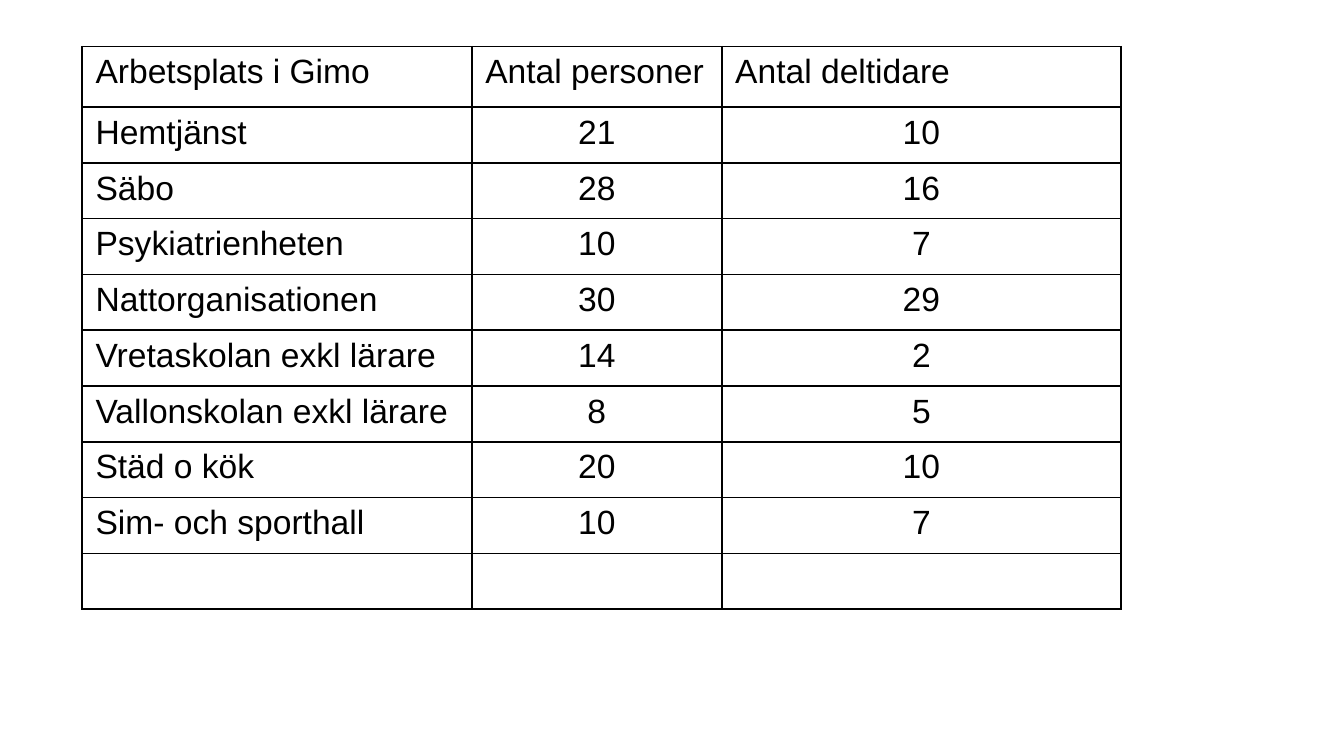
from typing import NamedTuple

from lxml.etree import SubElement
from pptx import Presentation
from pptx.dml.color import RGBColor
from pptx.enum.text import PP_ALIGN as Align
from pptx.oxml.ns import qn
from pptx.util import Pt

BLACK = RGBColor(0x00, 0x00, 0x00)
FONT = "Arial"
FONT_SIZE = Pt(18)
BORDER_WIDTH = Pt(1)

TABLE_LEFT, TABLE_TOP = 44, 25
COLUMN_WIDTHS = (208.8, 133.9, 213.8)
HEADER_HEIGHT, ROW_HEIGHT = 32.4, 29.9


class Workplace(NamedTuple):
    name: str
    people: str
    part_timers: str


HEADER = Workplace("Arbetsplats i Gimo", "Antal personer", "Antal deltidare")
WORKPLACES = (
    Workplace("Hemtjänst", "21", "10"),
    Workplace("Säbo", "28", "16"),
    Workplace("Psykiatrienheten", "10", "7"),
    Workplace("Nattorganisationen", "30", "29"),
    Workplace("Vretaskolan exkl lärare", "14", "2"),
    Workplace("Vallonskolan exkl lärare", "8", "5"),
    Workplace("Städ o kök", "20", "10"),
    Workplace("Sim- och sporthall", "10", "7"),
    Workplace("", "", ""),
)


def add_borders(cell) -> None:
    """Draw a solid line on all four sides of a table cell."""
    properties = cell._tc.get_or_add_tcPr()
    for side in ("a:lnL", "a:lnR", "a:lnT", "a:lnB"):
        line = SubElement(properties, qn(side), w=str(BORDER_WIDTH))
        fill = SubElement(line, qn("a:solidFill"))
        SubElement(fill, qn("a:srgbClr"), val=str(BLACK))


def fill_cell(cell, text: str, alignment: Align) -> None:
    add_borders(cell)
    cell.fill.background()
    paragraph = cell.text_frame.paragraphs[0]
    paragraph.text = text
    paragraph.alignment = alignment
    paragraph.font.size = FONT_SIZE
    for run in paragraph.runs:
        run.font.name = FONT
        run.font.size = FONT_SIZE
        run.font.bold = False
        run.font.color.rgb = BLACK


def add_workplace_table(slide) -> None:
    rows = (HEADER, *WORKPLACES)
    heights = (HEADER_HEIGHT, *[ROW_HEIGHT] * len(WORKPLACES))
    table = slide.shapes.add_table(
        len(rows), len(COLUMN_WIDTHS), Pt(TABLE_LEFT), Pt(TABLE_TOP),
        Pt(sum(COLUMN_WIDTHS)), Pt(sum(heights)),
    ).table
    table.first_row = False
    table.horz_banding = False

    for column, width in zip(table.columns, COLUMN_WIDTHS):
        column.width = Pt(width)
    for row_index, (workplace, height) in enumerate(zip(rows, heights)):
        table.rows[row_index].height = Pt(height)
        for column_index, text in enumerate(workplace):
            # Figures are centred, headings and names are on the left
            is_figure = row_index > 0 and column_index > 0
            alignment = Align.CENTER if is_figure else Align.LEFT
            fill_cell(table.cell(row_index, column_index), text, alignment)


def main() -> None:
    presentation = Presentation()
    presentation.slide_width, presentation.slide_height = Pt(720), Pt(405)
    # The slide has no title, so it uses the blank layout
    slide = presentation.slides.add_slide(presentation.slide_layouts[6])
    add_workplace_table(slide)
    presentation.save("out.pptx")


if __name__ == "__main__":
    main()
